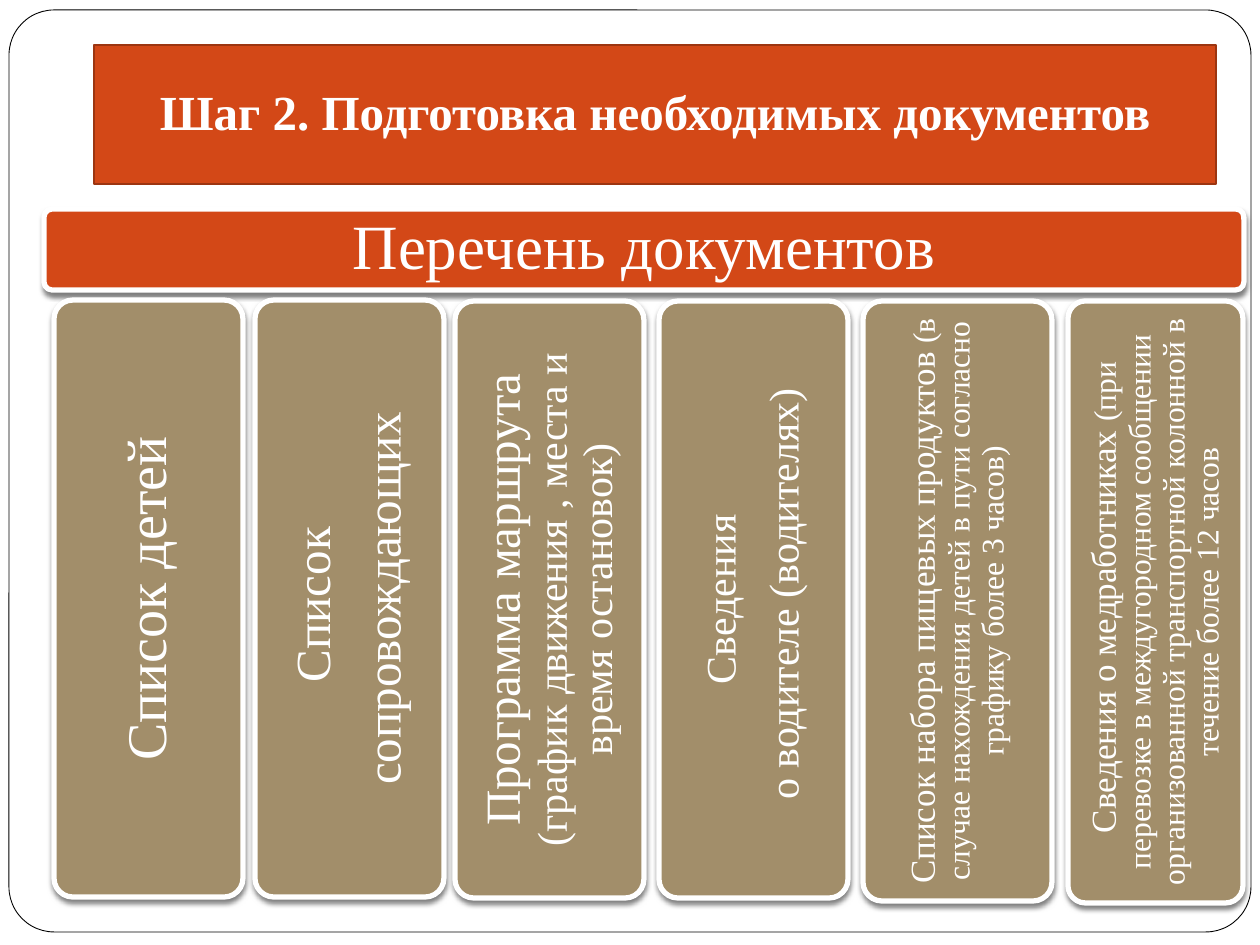
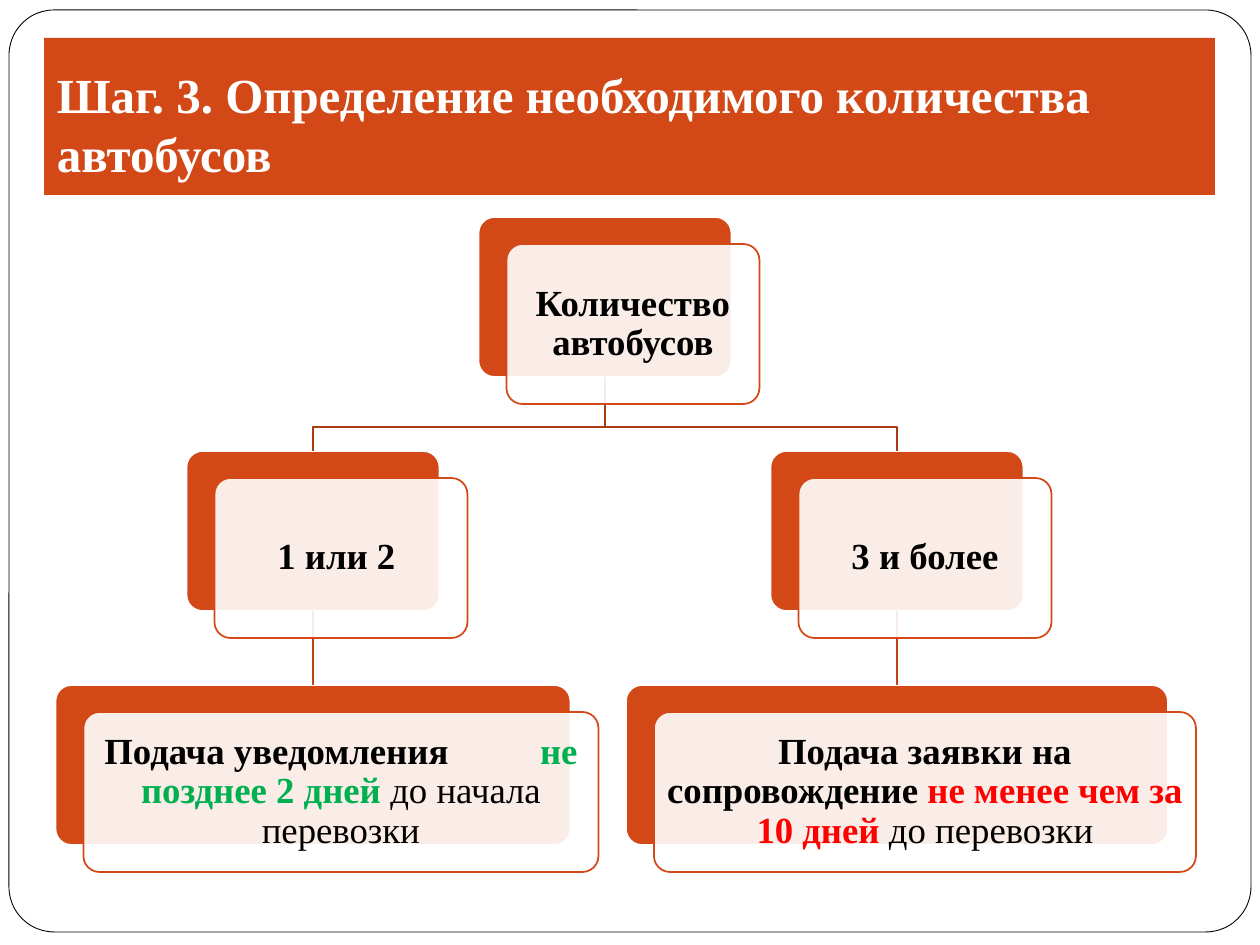
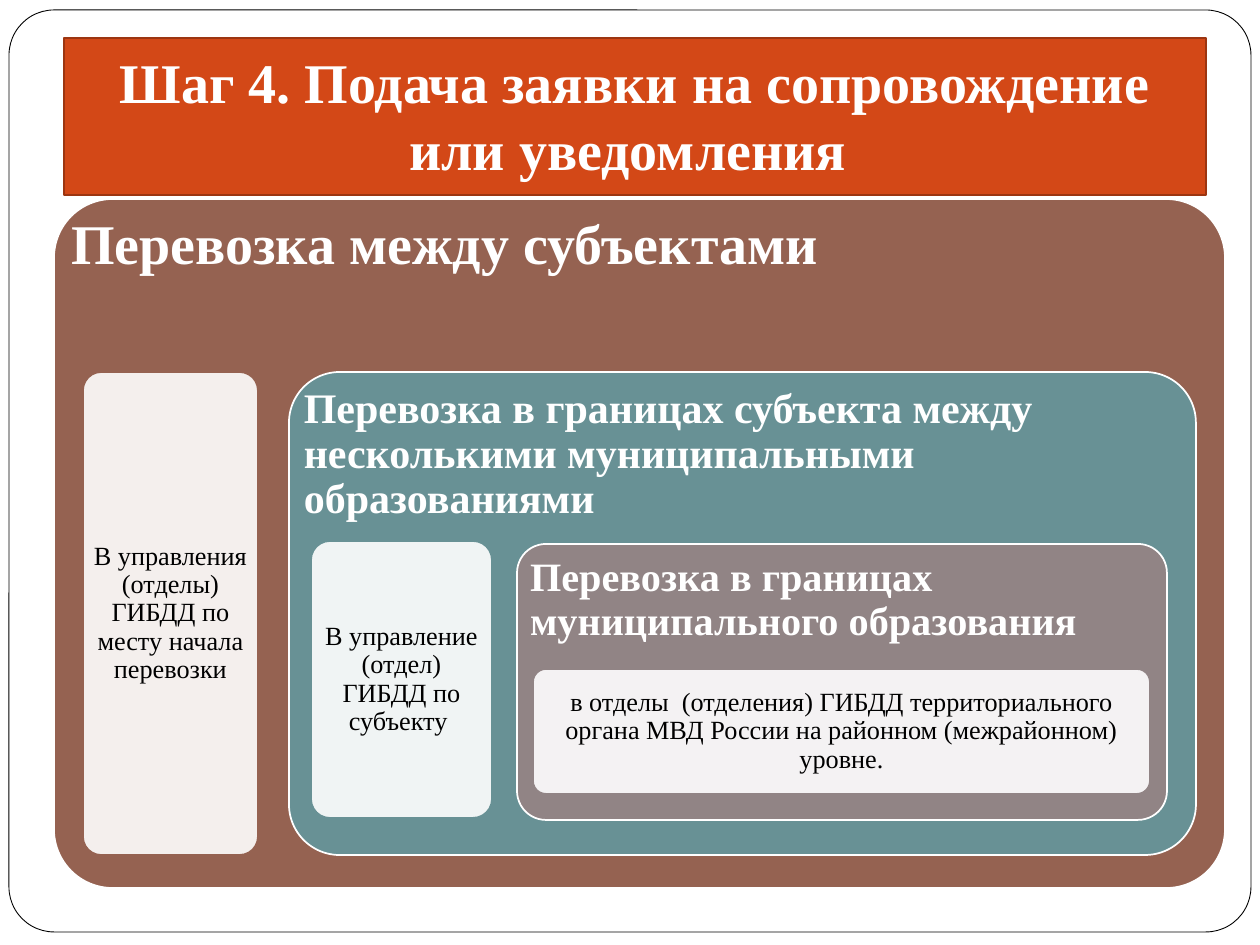
import dataclasses
import typing

import lxml.etree
import pptx
import pptx.dml.color
import pptx.enum.shapes
import pptx.enum.text
import pptx.oxml.ns
import pptx.util

EMU_PER_PX = 914400 / 126
ROUND = pptx.enum.shapes.MSO_SHAPE.ROUNDED_RECTANGLE
ALIGN = pptx.enum.text.PP_ALIGN
ANCHOR = pptx.enum.text.MSO_ANCHOR


@dataclasses.dataclass(frozen=True)
class Theme:
    font: str = "Times New Roman"
    white: str = "FFFFFF"
    black: str = "000000"
    accent: str = "D34817"
    accent_edge: str = "9C3511"
    branch: str = "A93A12"
    stem: str = "BF4115"
    sand: str = "A28E6A"
    brown: str = "956251"
    teal: str = "689195"
    mauve: str = "918485"
    green: str = "00B050"
    red: str = "FF0000"
    title: int = 28
    title_large: int = 32
    banner: int = 36
    node: int = 21
    note: int = 15


THEME = Theme()


class Box(typing.NamedTuple):
    left: int
    top: int
    width: int
    height: int

    def inside(self, dx, dy, width, height):
        return Box(self.left + dx, self.top + dy, width, height)

    def emu(self):
        return [px(length) for length in self]


class Part(typing.NamedTuple):
    """A stretch of text with what differs from its paragraph."""
    text: str
    size: typing.Optional[int] = None
    colour: typing.Optional[str] = None
    bold: typing.Optional[bool] = None
    tracking: int = 0


def px(length):
    return pptx.util.Emu(round(length * EMU_PER_PX))


def rgb(colour):
    return pptx.dml.color.RGBColor.from_string(colour)


def set_line(shape, colour, width=1):
    shape.line.color.rgb = rgb(colour)
    shape.line.width = pptx.util.Pt(width)


def add_sub(parent, tag, **attributes):
    return lxml.etree.SubElement(parent, pptx.oxml.ns.qn(tag), attributes)


def style_font(font, size, colour, bold):
    if size is not None:
        font.size = pptx.util.Pt(size)
    if colour is not None:
        font.color.rgb = rgb(colour)
    if bold is not None:
        font.bold = bold


def write(frame, paragraphs, size, colour, bold=False, align=ALIGN.CENTER,
          spacing=0.9):
    """Each paragraph is a list of parts."""
    frame.word_wrap = True
    for index, parts in enumerate(paragraphs):
        paragraph = frame.add_paragraph() if index else frame.paragraphs[0]
        paragraph.alignment = align
        paragraph.line_spacing = spacing
        if index < len(paragraphs) - 1:
            paragraph.space_after = pptx.util.Pt(10)
        paragraph.font.name = THEME.font
        style_font(paragraph.font, size, colour, bold)
        for part in parts:
            run = paragraph.add_run()
            run.text = part.text
            style_font(run.font, part.size, part.colour, part.bold)
            if part.tracking:
                run.font._element.set("spc", str(part.tracking * 100))


def set_insets(frame, left, top, right, bottom):
    frame.margin_left, frame.margin_top = px(left), px(top)
    frame.margin_right, frame.margin_bottom = px(right), px(bottom)


def add_round(slide, box, fill, edge, edge_width=1, corner=0.1, alpha=None):
    shape = slide.shapes.add_shape(ROUND, *box.emu())
    shape.adjustments[0] = corner
    shape.shadow.inherit = False
    shape.fill.solid()
    shape.fill.fore_color.rgb = rgb(fill)
    if alpha is not None:
        tint = shape._element.spPr.find(".//" + pptx.oxml.ns.qn("a:srgbClr"))
        add_sub(tint, "a:alpha", val=str(alpha * 1000))
    set_line(shape, edge, edge_width)
    return shape


def pad_text(shape, box, pad, anchor=ANCHOR.MIDDLE):
    """Measure the padding from the box edge, not from the rounded corner."""
    corner = 0.29 * shape.adjustments[0] * min(box.width, box.height)
    set_insets(shape.text_frame, *[max(0, pad - corner)] * 4)
    shape.text_frame.vertical_anchor = anchor


def add_frame(slide, layout):
    """Put the page frame on the layout, behind every slide."""
    frame = add_round(slide, Box(9, 10, 1242, 922), THEME.white, THEME.black,
                      0.5, 0.049)
    layout.shapes._spTree.insert(2, frame._element)


def add_title(slide, box, text, size=THEME.title, align=ALIGN.CENTER,
              anchor=ANCHOR.BOTTOM, edged=True):
    title = slide.shapes.title
    title.left, title.top, title.width, title.height = box.emu()
    title.fill.solid()
    title.fill.fore_color.rgb = rgb(THEME.accent)
    if edged:
        set_line(title, THEME.accent_edge)
    frame = title.text_frame
    frame.auto_size = pptx.enum.text.MSO_AUTO_SIZE.NONE
    frame.vertical_anchor = anchor
    set_insets(frame, 13, 6, 13, 13)
    write(frame, [[Part(text)]], size, THEME.white, True, align, 1.0)


# Slide 1: list of documents

def add_card(slide, box, fill, paragraphs, size, pad, upright=False):
    card = add_round(slide, box, fill, THEME.white, 3)
    effects = card._element.spPr.find(pptx.oxml.ns.qn("a:effectLst"))
    shadow = add_sub(effects, "a:outerShdw", blurRad="38100", dist="25400",
                     dir="5400000", rotWithShape="0")
    add_sub(add_sub(shadow, "a:srgbClr", val=THEME.black), "a:alpha",
            val="50000")
    pad_text(card, box, pad)
    if upright:
        card.text_frame._txBody.bodyPr.set("vert", "vert270")
    write(card.text_frame, paragraphs, size, THEME.white)


def add_documents(slide, area):
    add_card(slide, area.inside(0, 0, area.width, 81), THEME.accent,
             [[Part("Перечень документов")]], THEME.banner, 19)
    # left, top, width, height, size, padding, paragraphs
    documents = [
        (10, 91, 189, 597, 32, 16, [[Part("Список детей")]]),
        (211, 91, 189, 597, 28, 15,
         [[Part("Список ")], [Part("сопровождающих")]]),
        (411, 92, 189, 597, 28, 15,
         [[Part("Программа маршрута "),
           Part("(график движения , места и время остановок)", 24)]]),
        (615, 92, 189, 597, 24, 13,
         [[Part("Сведения")], [Part(" о водителе (водителях)")]]),
        (819, 92, 189, 600, 20, 10,
         [[Part("Список набора пищевых продуктов "),
           Part("(в случае нахождения детей в пути согласно графику "
                "более 3 часов)", 18)]]),
        (1024, 92, 175, 602, 20, 10,
         [[Part(" Сведения о медработниках "),
           Part("(при перевозке в междугородном сообщении организованной "
                "транспортной колонной в течение более 12 часов", 18)]]),
    ]
    for *place, size, pad, paragraphs in documents:
        add_card(slide, area.inside(*place), THEME.sand, paragraphs, size,
                 pad, upright=True)


# Slide 2: tree of bus counts

def add_branch(slide, parent, child):
    start = parent.left + parent.width / 2, parent.top + parent.height
    end = child.left + child.width / 2, child.top
    bend = start[1] + 50
    corners = [(start[0], bend), (end[0], bend), end]
    builder = slide.shapes.build_freeform(px(start[0]), px(start[1]))
    builder.add_line_segments([(px(x), px(y)) for x, y in corners],
                              close=False)
    branch = builder.convert_to_shape()
    branch.shadow.inherit = False
    branch.fill.background()
    set_line(branch, THEME.branch)


def add_stem(slide, parent, child):
    stem = slide.shapes.add_connector(
        pptx.enum.shapes.MSO_CONNECTOR.STRAIGHT, 0, 0, 0, 0)
    stem.begin_connect(parent, 2)
    stem.end_connect(child, 0)
    set_line(stem, THEME.stem)
    add_sub(stem._element.spPr, "a:effectLst")


def add_bus_tree(slide, area):
    node_height, level_step = 160, 234
    left_column, right_column = 258, 842
    # centre, level, width, text
    nodes = [
        ((left_column + right_column) / 2, 0, 253,
         [Part("Количество автобусов")]),
        (left_column, 1, 253, [Part("1 или 2 ")]),
        (right_column, 1, 253, [Part("3 и более")]),
        (left_column, 2, 515,
         [Part("Подача уведомления"), Part(" ", tracking=47),
          Part("не позднее 2 дней ", colour=THEME.green),
          Part("до начала перевозки", bold=False)]),
        (right_column, 2, 542,
         [Part("Подача заявки на сопровождение "),
          Part("не менее чем за 10 дней ", colour=THEME.red),
          Part("до перевозки", bold=False)]),
    ]
    boxes = [area.inside(centre - width / 2, level * level_step, width,
                         node_height)
             for centre, level, width, _ in nodes]
    backs = [add_round(slide, box, THEME.accent, THEME.white)
             for box in boxes]
    for child in (1, 2):
        add_branch(slide, boxes[0], boxes[child])
        add_stem(slide, backs[child], backs[child + 2])
    for box, (_, _, _, parts) in zip(boxes, nodes):
        front_box = box.inside(28, 27, box.width, box.height)
        front = add_round(slide, front_box, THEME.white, THEME.accent,
                          alpha=90)
        pad_text(front, front_box, 11)
        write(front.text_frame, [parts], THEME.node, THEME.black, True)


# Slide 3: nested areas of transport

def add_area(slide, box, colour, corner, heading, size, pad, note_box, note):
    panel = add_round(slide, box, colour, THEME.white, corner=corner)
    pad_text(panel, box, pad, ANCHOR.TOP)
    write(panel.text_frame, [[Part(heading)]], size, THEME.white, True,
          ALIGN.LEFT)
    label_box = box.inside(*note_box)
    label = add_round(slide, label_box, THEME.white, colour, corner=0.105,
                      alpha=90)
    pad_text(label, label_box, 8)
    write(label.text_frame, [[Part(note)]], THEME.note, THEME.black)


def add_nested_areas(slide, region):
    between = region.inside(235, 173, 907, 483)
    within = between.inside(228, 172, 650, 276)
    add_area(slide, region, THEME.brown, 0.085,
             "Перевозка между субъектами", 32, 16, (29, 173, 175, 483),
             "В управления (отделы) ГИБДД по месту начала перевозки")
    add_area(slide, between, THEME.teal, 0.105,
             "Перевозка в границах субъекта между несколькими "
             "муниципальными образованиями", 24, 13, (22, 169, 181, 277),
             "В управление (отдел) ГИБДД по субъекту ")
    add_area(slide, within, THEME.mauve, 0.105,
             "Перевозка в границах муниципального образования", 23, 13,
             (16, 125, 617, 125),
             "в отделы  (отделения) ГИБДД территориального органа "
             "МВД России на районном (межрайонном) уровне.")


def main():
    deck = pptx.Presentation()
    deck.slide_width, deck.slide_height = px(1260), px(945)
    layout = deck.slide_layouts[5]
    documents, buses, requests = [deck.slides.add_slide(layout)
                                  for _ in range(3)]
    add_frame(documents, layout)

    add_title(documents, Box(94, 45, 1122, 139),
              "Шаг 2. Подготовка необходимых документов",
              anchor=ANCHOR.MIDDLE)
    add_documents(documents, Box(44, 209, 1200, 694))

    add_title(buses, Box(44, 38, 1171, 157),
              "Шаг. 3. Определение необходимого количества автобусов",
              align=ALIGN.LEFT, edged=False)
    add_bus_tree(buses, Box(55, 217, 1141, 655))

    add_title(requests, Box(64, 38, 1142, 157),
              "Шаг 4. Подача заявки на сопровождение или уведомления ",
              size=THEME.title_large)
    add_nested_areas(requests, Box(54, 199, 1171, 689))

    deck.save("out.pptx")


if __name__ == "__main__":
    main()
